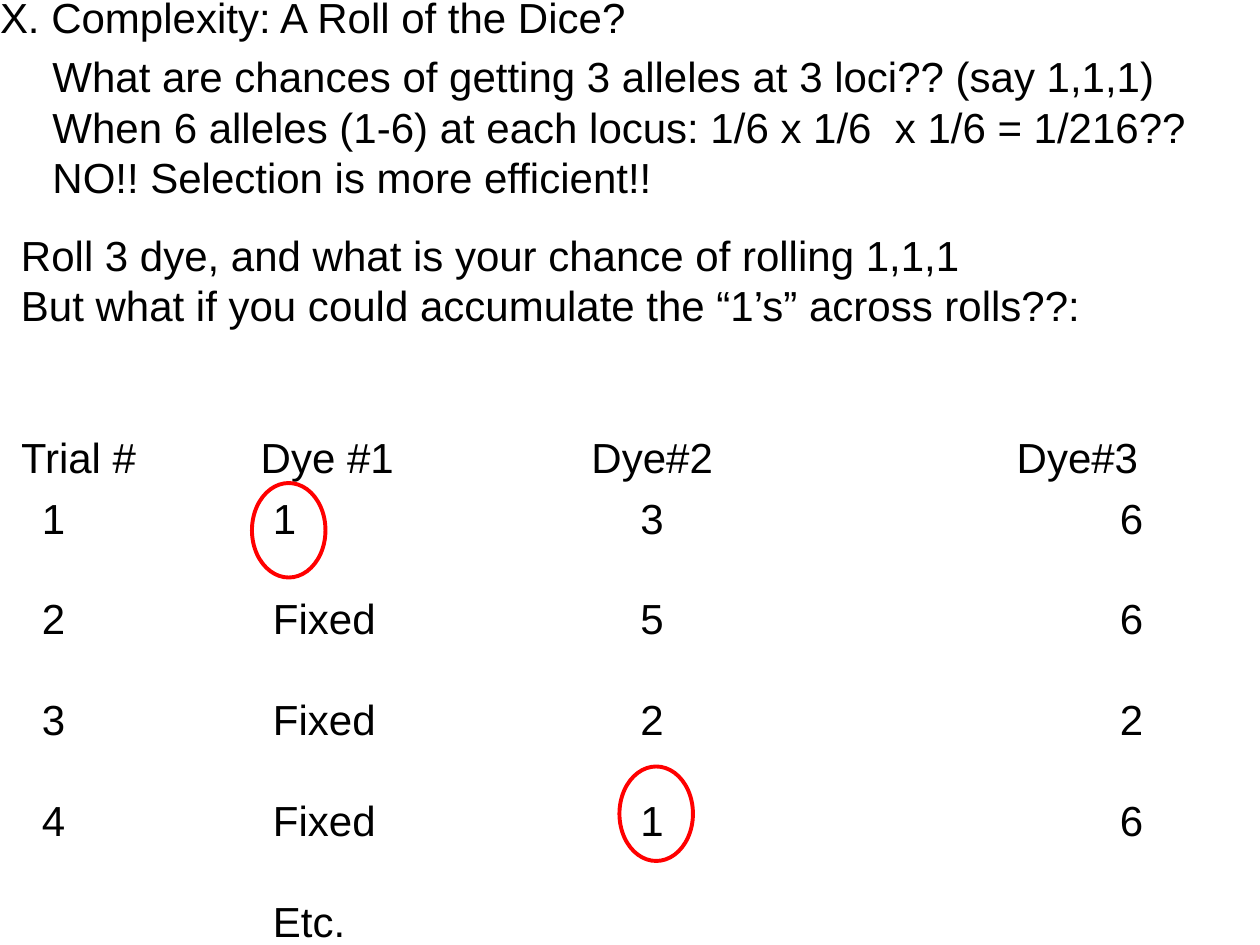
"""Build the slide on rolling dice and building up alleles by selection."""
from typing import NamedTuple

from pptx import Presentation
from pptx.dml.color import RGBColor
from pptx.enum.shapes import MSO_SHAPE
from pptx.enum.text import MSO_ANCHOR, MSO_AUTO_SIZE, PP_ALIGN
from pptx.oxml.ns import qn
from pptx.util import Pt


class Box(NamedTuple):
    left: float
    top: float
    width: float
    height: float


class Col(NamedTuple):
    head: str
    width: float
    inset: float
    cells: tuple[str, ...]


TITLE = Box(0, -5, 500, 29)
BODY = Box(30, 29, 690, 87)
ROLL = Box(12, 131, 708, 58)
GRID = Box(12, 246.6, 696, 294)
RINGS = (Box(354, 438, 42, 54), Box(144, 276, 42, 54))
HEAD, STEP, LINE = 34.8, 57.6, 28.8
COLS = (
    Col("Trial #", 137, 12, ("1", "2", "3", "4", "")),
    Col("Dye #1", 189, 7, ("1", "Fixed", "Fixed", "Fixed", "Etc.")),
    Col("Dye#2", 243, 28, ("3", "5", "2", "1", "")),
    Col("Dye#3", 127, 59, ("6", "6", "2", "6", "")),
)


def tint(code: str) -> RGBColor:
    return RGBColor.from_string(code)


def place(shape, box: Box) -> None:
    shape.left, shape.top, shape.width, shape.height = map(Pt, box)


def write(frame, lines, *, size=24, font="Arial", color="000000") -> None:
    frame.text = "\n".join(lines)
    for para in frame.paragraphs:
        para.alignment = PP_ALIGN.LEFT
        para.line_spacing = Pt(LINE)
        para.space_before = para.space_after = Pt(0)
        props = para._p.get_or_add_pPr()
        props.set("marL", "0")
        props.set("indent", "0")
        props.append(props.makeelement(qn("a:buNone"), {}))
        for run in para.runs:
            run.font.size, run.font.name = Pt(size), font
            run.font.color.rgb = tint(color)


def fill_box(shape, box: Box, *lines: str) -> None:
    place(shape, box)
    frame = shape.text_frame
    frame.word_wrap, frame.auto_size = True, MSO_AUTO_SIZE.NONE
    frame.vertical_anchor = MSO_ANCHOR.TOP
    frame.margin_left = frame.margin_right = Pt(0)
    frame.margin_top = frame.margin_bottom = Pt(0)
    write(frame, lines)


def fill_cell(cell, text: str, inset: float) -> None:
    cell.fill.background()
    cell.vertical_anchor = MSO_ANCHOR.TOP
    cell.margin_left, cell.margin_right = Pt(inset), Pt(0)
    cell.margin_top = cell.margin_bottom = Pt(0)
    write(cell.text_frame, [text])


def add_grid(slide, box: Box) -> None:
    count = len(COLS[0].cells)
    grid = slide.shapes.add_table(count + 1, len(COLS), *map(Pt, box)).table
    grid.first_row = grid.horz_banding = False
    for row, height in zip(grid.rows, [HEAD] + [STEP] * (count - 1) + [LINE]):
        row.height = Pt(height)
    for x, col in enumerate(COLS):
        grid.columns[x].width = Pt(col.width)
        fill_cell(grid.cell(0, x), col.head, 0)
        for y, text in enumerate(col.cells, 1):
            fill_cell(grid.cell(y, x), text, col.inset)


def add_ring(slide, box: Box) -> None:
    ring = slide.shapes.add_shape(MSO_SHAPE.OVAL, *map(Pt, box))
    ring.shadow.inherit = False
    ring.fill.background()
    ring.line.color.rgb = tint("FF0000")
    ring.line.width = Pt(2.25)


def main() -> None:
    deck = Presentation()
    deck.slide_width, deck.slide_height = Pt(720), Pt(540)
    slide = deck.slides.add_slide(deck.slide_layouts[1])
    fill_box(slide.shapes.title, TITLE, "X. Complexity: A Roll of the Dice?")
    fill_box(
        slide.placeholders[1], BODY,
        "What are chances of getting 3 alleles at 3 loci?? (say 1,1,1)",
        "When 6 alleles (1-6) at each locus: 1/6 x 1/6  x 1/6 = 1/216??",
        "NO!! Selection is more efficient!!",
    )
    fill_box(
        slide.shapes.add_textbox(*map(Pt, ROLL)), ROLL,
        "Roll 3 dye, and what is your chance of rolling 1,1,1",
        "But what if you could accumulate the “1’s” across rolls??:",
    )
    add_grid(slide, GRID)
    for box in RINGS:
        add_ring(slide, box)
    deck.save("out.pptx")


if __name__ == "__main__":
    main()
